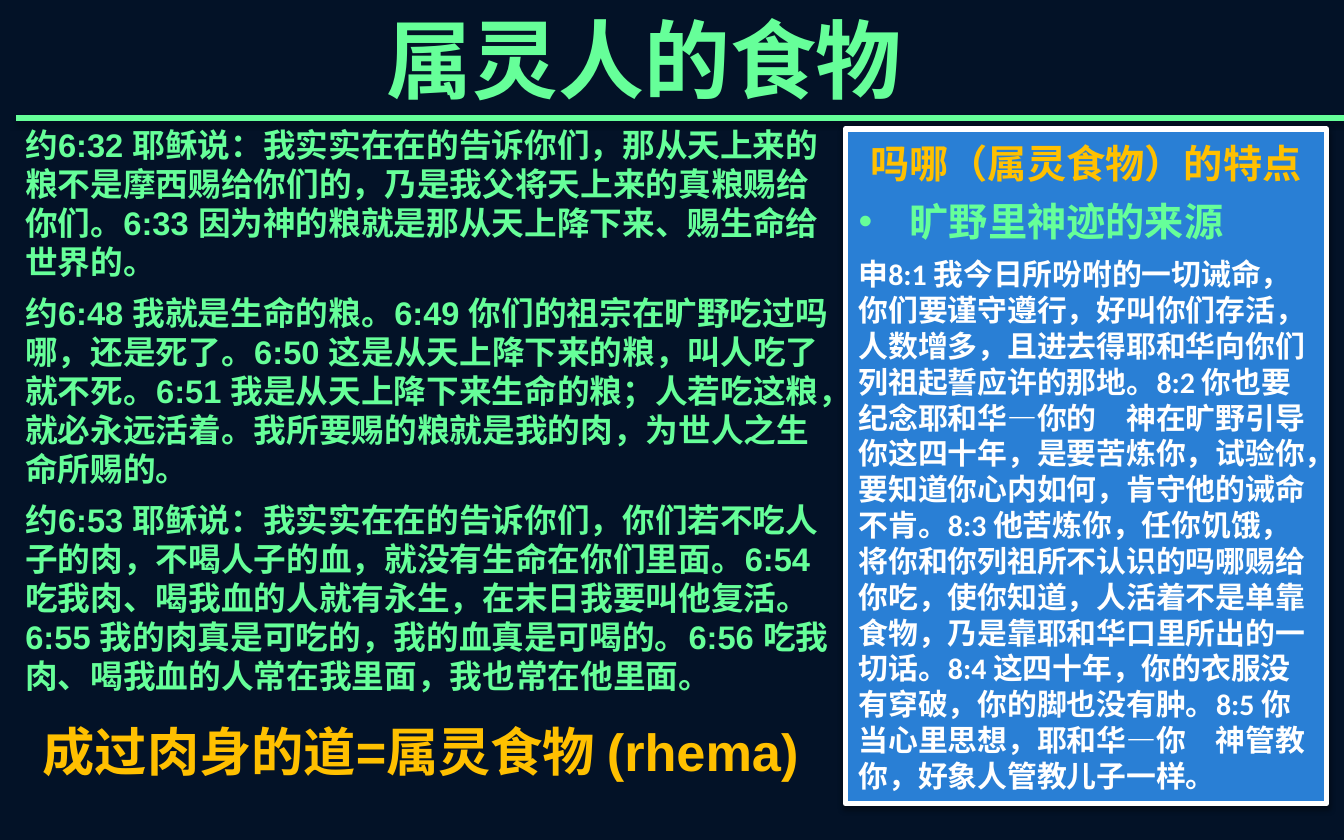
from lxml import etree
from pptx import Presentation
from pptx import util as u
from pptx.dml.color import RGBColor
from pptx.enum import lang, shapes, text
from pptx.oxml import ns

COLORS = {
    "background": "031227",
    "green": "66FF99",
    "gold": "FFC000",
    "panel": "297FD5",
    "white": "FFFFFF",
    "shadow": "000000",
}

VERSES = [
    "约6:32 耶稣说：我实实在在的告诉你们，那从天上来的粮不是摩西赐给你们的，乃是我父将天上来的真粮赐给你们。"
    "6:33 因为神的粮就是那从天上降下来、赐生命给世界的。",
    "约6:48 我就是生命的粮。6:49 你们的祖宗在旷野吃过吗哪，还是死了。"
    "6:50 这是从天上降下来的粮，叫人吃了就不死。"
    "6:51 我是从天上降下来生命的粮；人若吃这粮，就必永远活着。我所要赐的粮就是我的肉，为世人之生命所赐的。",
    "约6:53 耶稣说：我实实在在的告诉你们，你们若不吃人子的肉，不喝人子的血，就没有生命在你们里面。"
    "6:54 吃我肉、喝我血的人就有永生，在末日我要叫他复活。"
    "6:55 我的肉真是可吃的，我的血真是可喝的。"
    "6:56 吃我肉、喝我血的人常在我里面，我也常在他里面。",
]

MANNA = (
    "申8:1 我今日所吩咐的一切诫命，你们要谨守遵行，好叫你们存活，人数增多，且进去得耶和华向你们列祖起誓应许的那地。"
    "8:2 你也要纪念耶和华―你的　神在旷野引导你这四十年，是要苦炼你，试验你，要知道你心内如何，肯守他的诫命不肯。"
    "8:3 他苦炼你，任你饥饿，将你和你列祖所不认识的吗哪赐给你吃，使你知道，人活着不是单靠食物，"
    "乃是靠耶和华口里所出的一切话。"
    "8:4 这四十年，你的衣服没有穿破，你的脚也没有肿。"
    "8:5 你当心里思想，耶和华―你　神管教你，好象人管教儿子一样。"
)


class SlideBuilder:
    def __init__(self, slide, colors):
        self.slide = slide
        self.colors = {name: RGBColor.from_string(value) for name, value in colors.items()}

    def background(self, color):
        fill = self.slide.background.fill
        fill.solid()
        fill.fore_color.rgb = self.colors[color]

    def outline(self, shape, color, width):
        shape.line.color.rgb = self.colors[color]
        shape.line.width = u.Pt(width)

    def shadow(self, shape, blur, distance, opacity):
        properties = shape._element.spPr
        effects = etree.SubElement(properties, ns.qn("a:effectLst"))
        outer = etree.SubElement(
            effects, ns.qn("a:outerShdw"),
            blurRad=str(u.Pt(blur)), dist=str(u.Pt(distance)), dir="5400000", rotWithShape="0",
        )
        color = etree.SubElement(outer, ns.qn("a:srgbClr"), val=str(self.colors["shadow"]))
        etree.SubElement(color, ns.qn("a:alpha"), val=str(opacity * 1000))

    def rule(self, left, top, right, color):
        line = self.slide.shapes.add_connector(
            shapes.MSO_CONNECTOR.STRAIGHT, u.Inches(left), u.Inches(top), u.Inches(right), u.Inches(top)
        )
        self.outline(line, color, 3)
        self.shadow(line, 3.1, 1.8, 35)

    def text_box(self, box, paragraphs, wrap=True):
        shape = self.slide.shapes.add_textbox(*map(u.Inches, box))
        self.fill_text(shape.text_frame, paragraphs, wrap)

    def panel(self, box, paragraphs):
        shape = self.slide.shapes.add_shape(shapes.MSO_SHAPE.RECTANGLE, *map(u.Inches, box))
        shape.fill.solid()
        shape.fill.fore_color.rgb = self.colors["panel"]
        self.outline(shape, "white", 3)
        self.shadow(shape, 3.1, 1.6, 38)
        self.fill_text(shape.text_frame, paragraphs, True)

    def fill_text(self, frame, paragraphs, wrap):
        frame.word_wrap = wrap
        frame.auto_size = text.MSO_AUTO_SIZE.SHAPE_TO_FIT_TEXT
        for index, item in enumerate(paragraphs):
            paragraph = frame.paragraphs[0] if index == 0 else frame.add_paragraph()
            self.paragraph(paragraph, **item)

    def paragraph(self, paragraph, words, size, color, font="Arial", after=0, centered=False, bullet=False):
        paragraph.alignment = text.PP_ALIGN.CENTER if centered else text.PP_ALIGN.LEFT
        paragraph.space_after = u.Pt(after)
        if bullet:
            self.bullet(paragraph, 0.38)
        run = paragraph.add_run()
        run.text = words
        run.font.color.rgb = self.colors[color]
        formats = {
            "size": u.Pt(size),
            "name": font,
            "bold": True,
            "language_id": lang.MSO_LANGUAGE_ID.SIMPLIFIED_CHINESE,
        }
        for name, value in formats.items():
            setattr(run.font, name, value)

    def bullet(self, paragraph, indent):
        properties = paragraph._p.get_or_add_pPr()
        properties.set("marL", str(u.Inches(indent)))
        properties.set("indent", str(-u.Inches(indent)))
        etree.SubElement(properties, ns.qn("a:buFont"), typeface="Arial")
        etree.SubElement(properties, ns.qn("a:buChar"), char="•")


def main():
    presentation = Presentation()
    presentation.slide_width = u.Inches(10)
    presentation.slide_height = u.Inches(6.25)
    builder = SlideBuilder(presentation.slides.add_slide(presentation.slide_layouts[6]), COLORS)

    builder.background("background")
    builder.rule(0.12, 0.88, 10, "green")
    builder.text_box(
        (0.09, 0.88, 6.25, 4.39),
        [dict(words=verse, size=17.5, color="green", after=6) for verse in VERSES],
    )
    builder.text_box(
        (2.78, 0, 4.07, 0.88), [dict(words="属灵人的食物", size=46, color="green")], wrap=False
    )
    builder.text_box(
        (0.22, 5.3, 6.03, 0.57), [dict(words="成过肉身的道=属灵食物 (rhema)", size=28, color="gold")]
    )
    builder.panel(
        (6.29, 0.96, 3.58, 5.02),
        [
            dict(words="吗哪（属灵食物）的特点", size=21, color="gold", after=6, centered=True),
            dict(words="旷野里神迹的来源", size=21, color="green", after=6, bullet=True),
            dict(words=MANNA, size=16, color="white", font="Calibri", after=6),
        ],
    )
    presentation.save("out.pptx")


if __name__ == "__main__":
    main()
